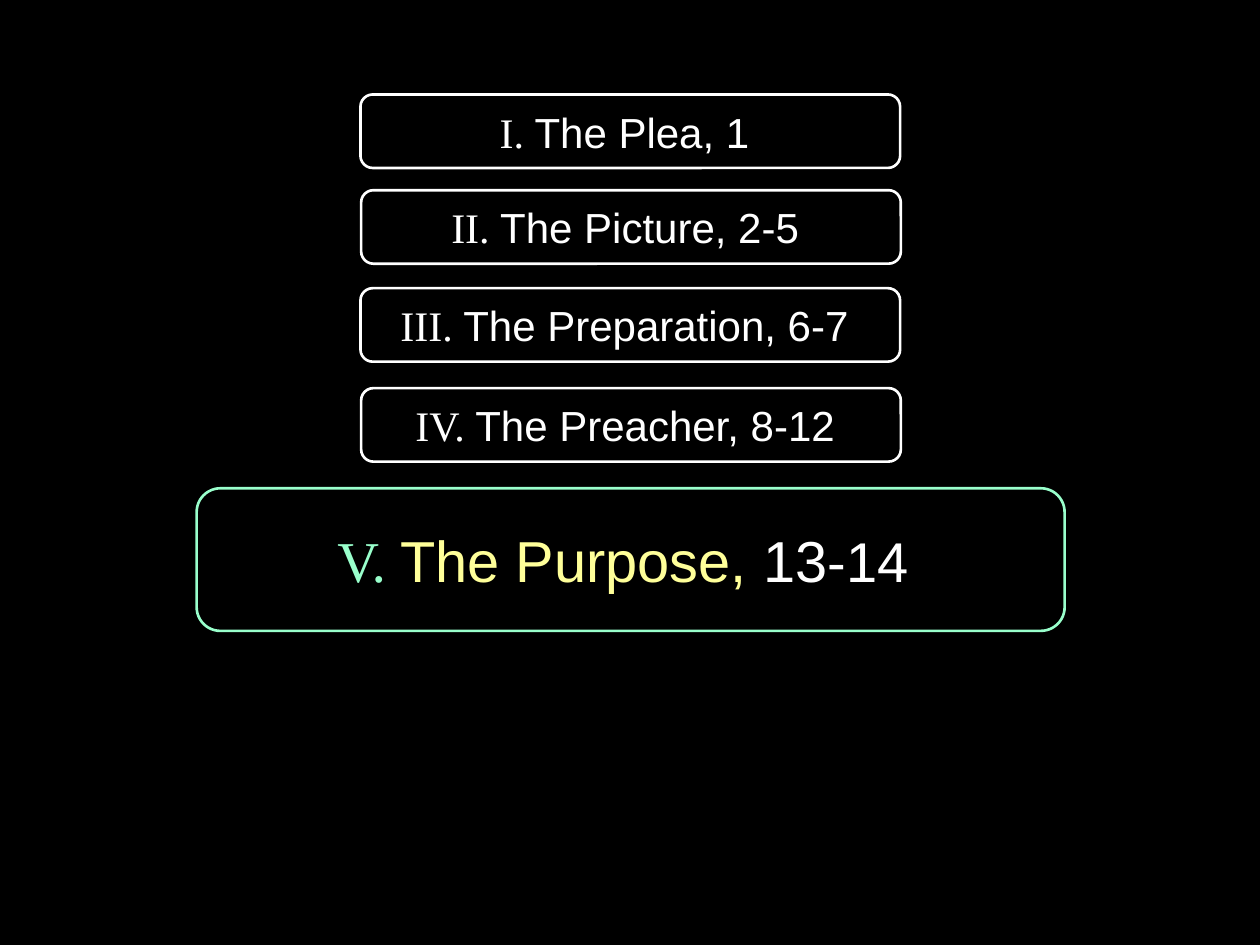
from pptx import Presentation
from pptx.dml.color import RGBColor
from pptx.enum.shapes import MSO_SHAPE as Shape
from pptx.enum.text import MSO_ANCHOR as Anchor, PP_ALIGN as Align
from pptx.util import Pt

BLACK, WHITE = "000000", "FFFFFF"
MINT, CREAM = "99FFCC", "FFFF99"
SERIF, SANS = "Times New Roman", "Arial"

# Outline points: left, top, numeral, text
POINTS = [
    (206, 54, "I. ", "The Plea, 1 "),
    (206.4, 108.7, "II. ", "The Picture, 2-5 "),
    (206, 164.7, "III. ", "The Preparation, 6-7 "),
    (206.4, 221.8, "IV. ", "The Preacher, 8-12 "),
]


def color(code):
    return RGBColor.from_string(code)


def add_run(para, text, size, face, hue):
    run = para.add_run()
    run.text = text
    font = run.font
    font.size, font.name = Pt(size), face
    font.color.rgb = color(hue)


def add_box(slide, left, top, width, height, edge, runs):
    box = slide.shapes.add_shape(
        Shape.ROUNDED_RECTANGLE, Pt(left), Pt(top), Pt(width), Pt(height))
    box.shadow.inherit = False
    box.fill.solid()
    box.fill.fore_color.rgb = color(BLACK)
    box.line.color.rgb = color(edge)
    box.line.width = Pt(1.5)
    frame = box.text_frame
    frame.vertical_anchor = Anchor.MIDDLE
    para = frame.paragraphs[0]
    para.alignment = Align.CENTER
    for run in runs:
        add_run(para, *run)


def main():
    deck = Presentation()
    deck.slide_width, deck.slide_height = Pt(720), Pt(540)
    slide = deck.slides.add_slide(deck.slide_layouts[6])

    # Black background
    fill = slide.background.fill
    fill.solid()
    fill.fore_color.rgb = color(BLACK)

    # Earlier points
    for left, top, mark, text in POINTS:
        add_box(slide, left, top, 308.4, 42, WHITE,
                [(mark, 24, SERIF, WHITE), (text, 24, SANS, WHITE)])

    # Current point, enlarged
    add_box(slide, 112.4, 279, 496, 81.5, MINT,
            [("V. ", 33, SERIF, MINT), ("The Purpose, ", 33, SANS, CREAM),
             ("13", 33, SANS, WHITE), ("-14 ", 32, SANS, WHITE)])

    deck.save("out.pptx")


if __name__ == "__main__":
    main()
